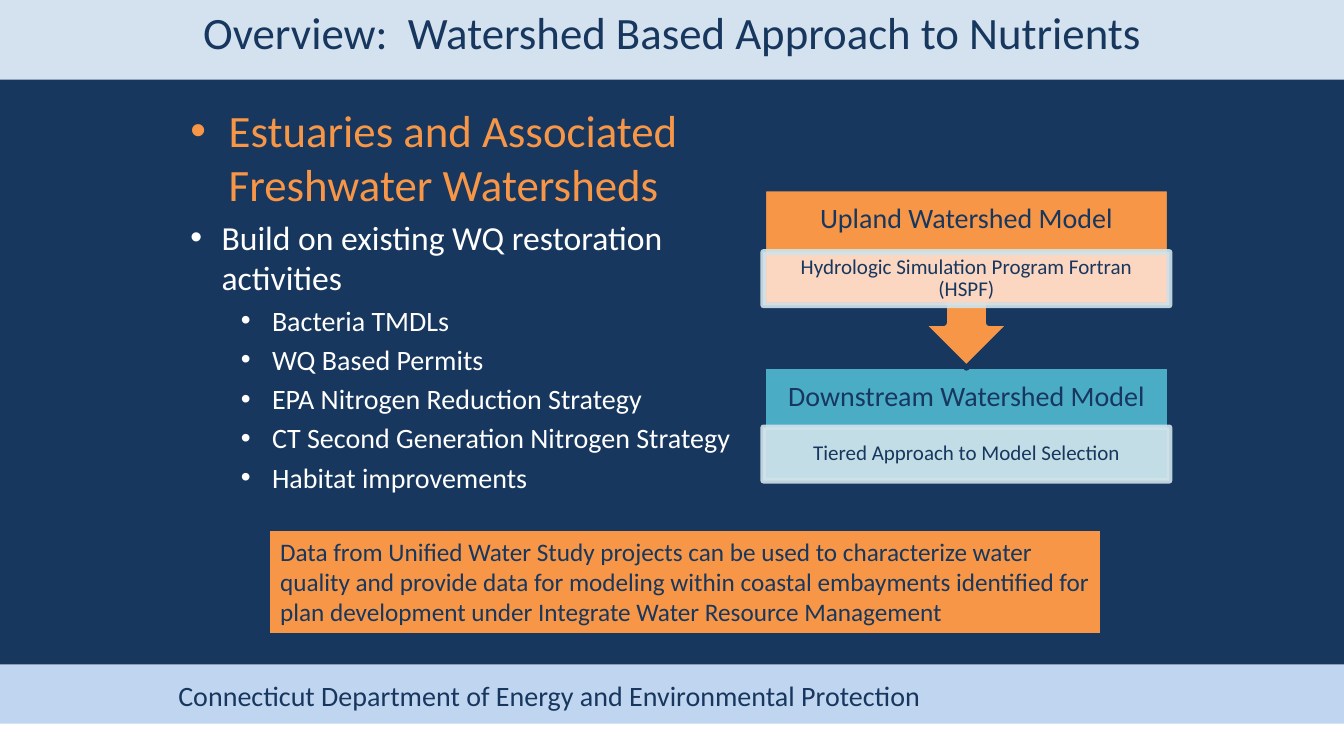
from lxml import etree
from pptx import Presentation
from pptx.dml.color import RGBColor
from pptx.enum.shapes import MSO_SHAPE
from pptx.enum.text import MSO_ANCHOR, PP_ALIGN
from pptx.oxml.ns import qn
from pptx.util import Inches, Pt

RECTANGLE = MSO_SHAPE.RECTANGLE
ARROW_CALLOUT = MSO_SHAPE.UP_ARROW_CALLOUT
TOP, MIDDLE = MSO_ANCHOR.TOP, MSO_ANCHOR.MIDDLE
LEFT, CENTER = PP_ALIGN.LEFT, PP_ALIGN.CENTER

NAVY = RGBColor(0x17, 0x37, 0x5E)
WHITE = RGBColor(0xFF, 0xFF, 0xFF)
ORANGE = RGBColor(0xF7, 0x96, 0x46)
TEAL = RGBColor(0x4B, 0xAC, 0xC6)
TITLE_BLUE = RGBColor(0xD4, 0xE1, 0xEE)
FOOTER_BLUE = RGBColor(0xC0, 0xD5, 0xF0)
PALE_TEAL = RGBColor(0xD0, 0xE3, 0xEA)
PALE_ORANGE = RGBColor(0xFC, 0xDD, 0xCF)

FONT = "Calibri"
MODEL_LEFT, MODEL_WIDTH = 7.57, 4.03
HEADER_HEIGHT, DETAIL_HEIGHT = 0.62, 0.53

TOPICS = [
    ("Estuaries and Associated Freshwater Watersheds", 32, ORANGE, 0, 0.38, 0.38),
    ("Build on existing WQ restoration activities", 24, WHITE, 0, 0.31, 0.31),
]
ACTIVITIES = [
    "Bacteria TMDLs",
    "WQ Based Permits",
    "EPA Nitrogen Reduction Strategy",
    "CT Second Generation Nitrogen Strategy",
    "Habitat improvements",
]


def add_block(page, kind, left, top, width, height, fill, line=None):
    """Add a flat filled shape, with a 4 pt outline if a line colour is given."""
    block = page.shapes.add_shape(
        kind, Inches(left), Inches(top), Inches(width), Inches(height))
    block.shadow.inherit = False
    block.fill.solid()
    block.fill.fore_color.rgb = fill
    if line is None:
        block.line.fill.background()
    else:
        block.line.color.rgb = line
        block.line.width = Pt(4)
    return block


def add_box(page, left, top, width, height):
    """Add an empty text box."""
    return page.shapes.add_textbox(
        Inches(left), Inches(top), Inches(width), Inches(height))


def soften(block, percent):
    """Make the fill and outline of a block partly transparent."""
    for color in block.element.spPr.iter(qn("a:srgbClr")):
        etree.SubElement(color, qn("a:alpha"), val=str(percent * 1000))


def set_bullet(para, indent, hanging):
    """Give a paragraph a round bullet with a hanging indent."""
    properties = para._p.get_or_add_pPr()
    properties.set("marL", str(Inches(indent)))
    properties.set("indent", str(-Inches(hanging)))
    etree.SubElement(properties, qn("a:buFont"), typeface="Arial")
    etree.SubElement(properties, qn("a:buChar"), char="•")


def format_para(para, text, size=20, color=NAVY, align=LEFT, spacing=None):
    """Fill a paragraph with one formatted span."""
    para.alignment = align
    if spacing:
        para.line_spacing = spacing
    span = para.add_run()
    span.text = text
    span.font.name = FONT
    span.font.size = Pt(size)
    span.font.color.rgb = color


def write(box, text, anchor=TOP, insets=(0.1, 0.05), **style):
    """Write one paragraph in a box, with side and top insets in inches."""
    frame = box.text_frame
    frame.word_wrap = True
    frame.vertical_anchor = anchor
    frame.margin_left = frame.margin_right = Inches(insets[0])
    frame.margin_top = frame.margin_bottom = Inches(insets[1])
    format_para(frame.paragraphs[0], text, **style)


def add_topics(page):
    """Add the bulleted list of topics and restoration activities."""
    frame = add_box(page, 1.79, 0.97, 6.06, 4.19).text_frame
    frame.word_wrap = True
    items = TOPICS + [(name, 20, WHITE, 1, 0.81, 0.31) for name in ACTIVITIES]
    for number, (text, size, color, level, indent, hanging) in enumerate(items):
        para = frame.add_paragraph() if number else frame.paragraphs[0]
        set_bullet(para, indent, hanging)
        para.level = level
        if number:
            para.space_before = Pt(size * 0.2)
        format_para(para, text, size=size, color=color)


def add_model(page, kind, top, height, fill, header, detail_top, detail_fill, detail):
    """Add a model step with a header and a detail strip."""
    block = add_block(page, kind, MODEL_LEFT, top, MODEL_WIDTH, height, fill, NAVY)
    if kind == ARROW_CALLOUT:
        block.rotation = 180
    title = add_box(page, MODEL_LEFT, top, MODEL_WIDTH, HEADER_HEIGHT)
    write(title, header, MIDDLE, (0.16, 0.16), align=CENTER, spacing=0.9)
    strip = add_block(page, RECTANGLE, MODEL_LEFT, detail_top, MODEL_WIDTH,
                      DETAIL_HEIGHT, detail_fill, PALE_TEAL)
    soften(strip, 90)
    write(strip, detail, MIDDLE, (0.12, 0.02), size=15, align=CENTER, spacing=0.9)


def main():
    """Build the slide and save it."""
    deck = Presentation()
    deck.slide_width, deck.slide_height = Inches(13.33), Inches(7.5)
    page = deck.slides.add_slide(deck.slide_layouts[6])
    page.background.fill.solid()
    page.background.fill.fore_color.rgb = NAVY

    for top, height, color in [
            (7.08, 0.42, WHITE), (0, 0.79, TITLE_BLUE), (6.59, 0.59, FOOTER_BLUE)]:
        add_block(page, RECTANGLE, 0, top, 13.33, height, color)
    write(add_box(page, 1.67, 6.68, 11.48, 0.44),
          "Connecticut Department of Energy and Environmental Protection")
    write(add_box(page, 1.67, 0, 10, 1.25),
          "Overview:  Watershed Based Approach to Nutrients", size=32, align=CENTER)
    add_topics(page)

    add_model(page, RECTANGLE, 3.63, 1.16, TEAL, "Downstream Watershed Model",
              4.24, PALE_TEAL, "Tiered Approach to Model Selection")
    add_model(page, ARROW_CALLOUT, 1.87, 1.78, ORANGE, "Upland Watershed Model",
              2.5, PALE_ORANGE, "Hydrologic Simulation Program Fortran (HSPF)")

    note = add_block(page, RECTANGLE, 2.68, 5.27, 8.23, 1.01, ORANGE)
    write(note, "Data from Unified Water Study projects can be used to characterize "
          "water quality and provide data for modeling within coastal embayments "
          "identified for plan development under Integrate Water Resource Management",
          size=18)
    deck.save("out.pptx")


if __name__ == "__main__":
    main()
